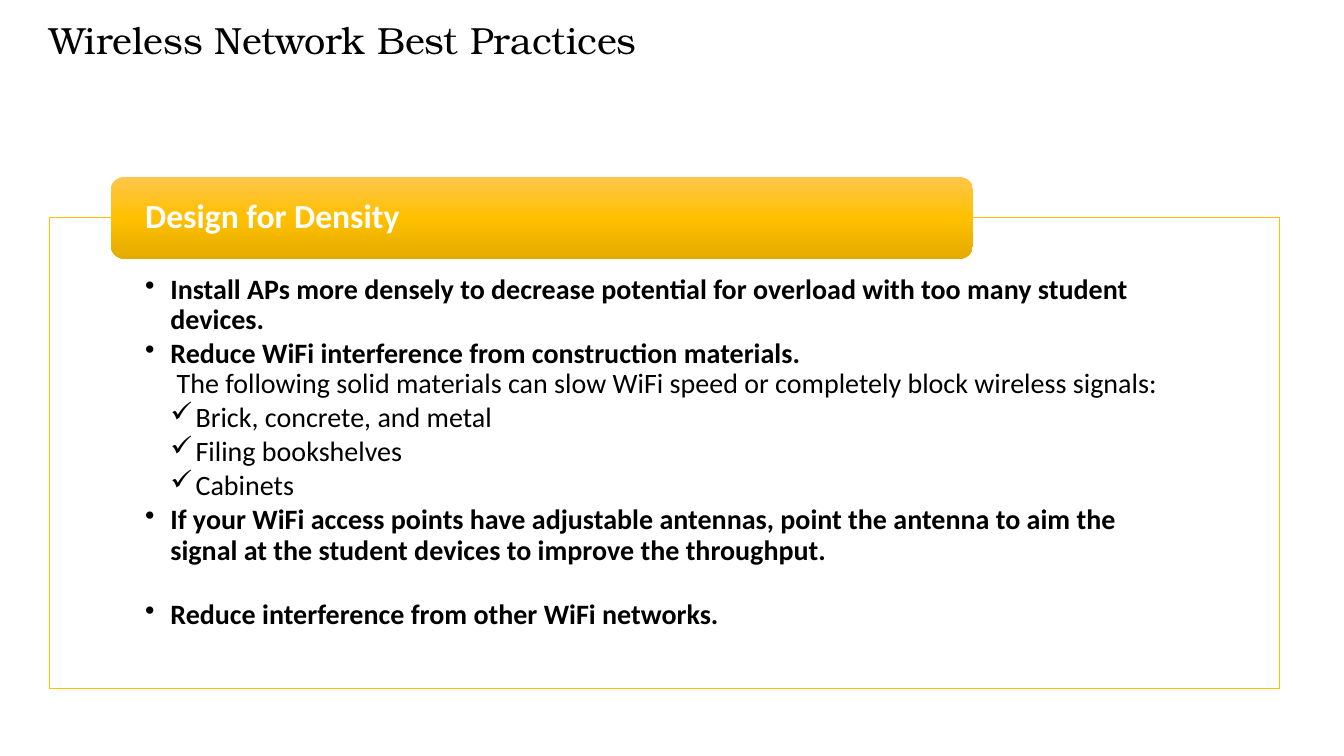
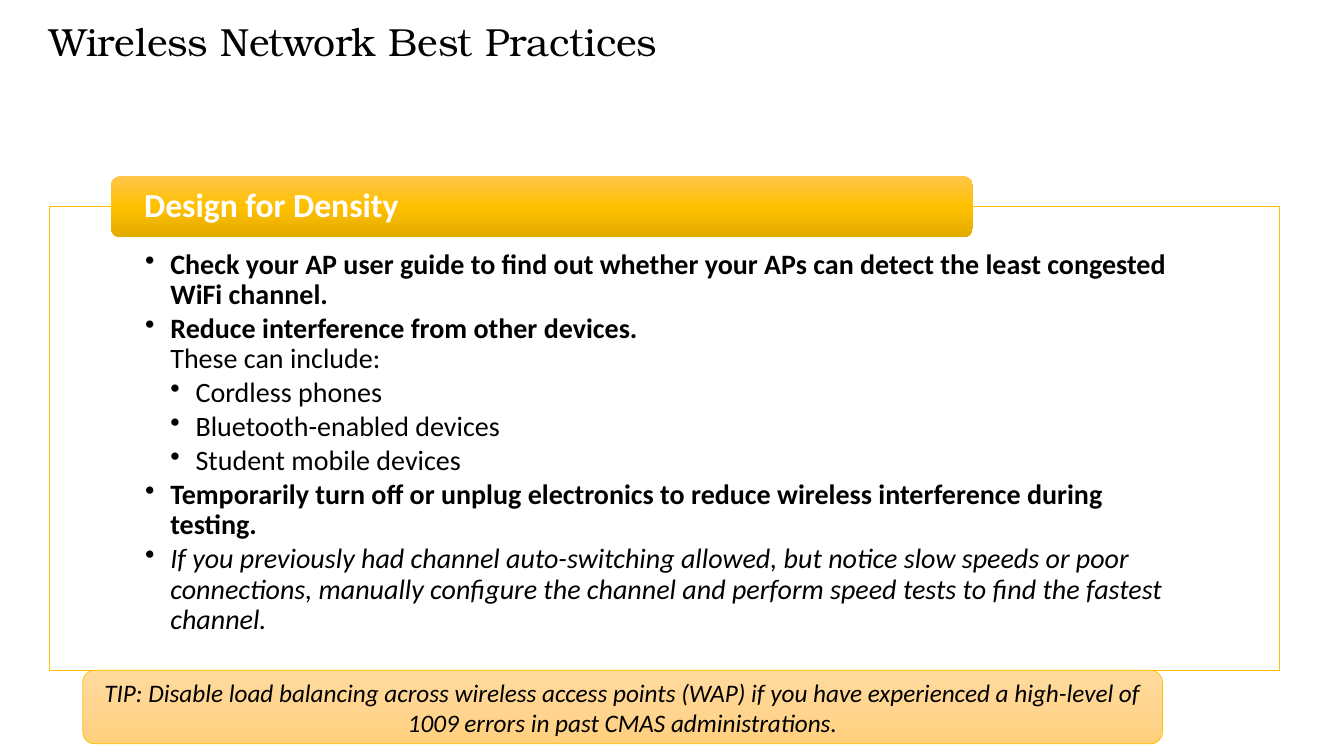
from copy import deepcopy
from dataclasses import dataclass

from lxml.etree import SubElement
from pptx import Presentation
from pptx.dml.color import RGBColor
from pptx.enum.shapes import MSO_SHAPE
from pptx.enum.text import MSO_ANCHOR, MSO_AUTO_SIZE, PP_ALIGN
from pptx.oxml.ns import qn
from pptx.util import Inches, Pt

TITLE = "Wireless Network Best Practices"
HEADING = "Design for Density"
TITLE_FONT = "TeX Gyre Bonum"
BODY_FONT = "Calibri"
BLACK, WHITE, GOLD = "000000", "FFFFFF", "FFC000"
HEADING_GRADIENT = ("FFC64B", GOLD, "E3AB00")
TIP_GRADIENT = ("FFDB9E", "FFD590", "FFD07C")
LEFT = 0.49
FRAME_WIDTH = 12.2
LINE_SPACING = 0.9
INDENT = 0.25
ITEM_GAP = 2.7


@dataclass(frozen=True)
class Item:
    """A bullet; detail follows on a new line in regular weight."""
    text: str
    detail: str = ""
    level: int = 1
    bullet: str = "•"
    bold: bool = False
    italic: bool = False
    space_after: float = ITEM_GAP


@dataclass(frozen=True)
class Page:
    title_size: int
    frame_top: float
    frame_height: float
    text_top: float
    heading_height: float
    items: tuple[Item, ...]
    tip: str = ""


PAGES = (
    Page(27, 2.16, 4.67, 0.57, 0.81, (
        Item("Install APs more densely to decrease potential for overload "
             "with too many student devices.", bold=True),
        Item("Reduce WiFi interference from construction materials.",
             " The following solid materials can slow WiFi speed or "
             "completely block wireless signals:", bold=True),
        Item("Brick, concrete, and metal", level=2, bullet="✓"),
        Item("Filing bookshelves", level=2, bullet="✓"),
        Item("Cabinets", level=2, bullet="✓"),
        Item("If your WiFi access points have adjustable antennas, point the "
             "antenna to aim the signal at the student devices to improve "
             "the throughput.", bold=True, space_after=24.5),
        Item("Reduce interference from other WiFi networks.", bold=True),
    )),
    Page(28, 2.05, 4.6, 0.43, 0.61, (
        Item("Check your AP user guide to find out whether your APs can "
             "detect the least congested WiFi channel.", bold=True),
        Item("Reduce interference from other devices.",
             "These can include:", bold=True),
        Item("Cordless phones", level=2),
        Item("Bluetooth-enabled devices", level=2),
        Item("Student mobile devices", level=2),
        Item("Temporarily turn off or unplug electronics to reduce wireless "
             "interference during testing.", bold=True),
        Item("If you previously had channel auto-switching allowed, but "
             "notice slow speeds or poor connections, manually configure the "
             "channel and perform speed tests to find the fastest channel.",
             italic=True),
    ), "TIP: Disable load balancing across wireless access points (WAP) if "
       "you have experienced a high-level of 1009 errors in past CMAS "
       "administrations."),
)


def color(value: str) -> RGBColor:
    return RGBColor.from_string(value)


def format_run(run, size: float, name: str = BODY_FONT, fill: str = BLACK,
               bold: bool = False, italic: bool = False) -> None:
    font = run.font
    font.size, font.name = Pt(size), name
    font.bold, font.italic = bold, italic
    font.color.rgb = color(fill)


def set_margins(text_frame, left: float, top: float, right: float,
                bottom: float) -> None:
    text_frame.margin_left, text_frame.margin_top = Inches(left), Inches(top)
    text_frame.margin_right = Inches(right)
    text_frame.margin_bottom = Inches(bottom)


def add_box(slide, kind: MSO_SHAPE, left: float, top: float, width: float,
            height: float, line: str = ""):
    shape = slide.shapes.add_shape(kind, Inches(left), Inches(top),
                                   Inches(width), Inches(height))
    shape.shadow.inherit = False
    if line:
        shape.line.color.rgb = color(line)
        shape.line.width = Pt(0.5)
    else:
        shape.line.fill.background()
    shape.text_frame.word_wrap = True
    return shape


def fill_gradient(shape, colors: tuple[str, ...]) -> None:
    """Fill from top to bottom with evenly spaced colours."""
    fill = shape.fill
    fill.gradient()
    fill.gradient_angle = 270
    stop_list = shape.element.spPr.find(qn("a:gradFill")).find(qn("a:gsLst"))
    while len(stop_list) < len(colors):
        stop_list.append(deepcopy(stop_list[0]))
    for index, (stop, value) in enumerate(zip(fill.gradient_stops, colors)):
        stop.position = index / (len(colors) - 1)
        stop.color.rgb = color(value)


def add_title(slide, size: int) -> None:
    title = slide.shapes.title
    title.left, title.top = Inches(LEFT), Inches(0.22)
    title.width, title.height = Inches(8.82), Inches(0.98)
    text_frame = title.text_frame
    text_frame.text = TITLE
    text_frame.auto_size = MSO_AUTO_SIZE.NONE
    text_frame.vertical_anchor = MSO_ANCHOR.TOP
    set_margins(text_frame, 0, 0, 0, 0)
    paragraph = text_frame.paragraphs[0]
    paragraph.alignment = PP_ALIGN.LEFT
    paragraph.line_spacing = LINE_SPACING
    format_run(paragraph.runs[0], size, TITLE_FONT)


def write_item(paragraph, item: Item) -> None:
    paragraph.text = f"{item.text}\v{item.detail}" if item.detail else item.text
    paragraph.level = item.level
    paragraph.alignment = PP_ALIGN.LEFT
    paragraph.line_spacing = LINE_SPACING
    paragraph.space_after = Pt(item.space_after)
    properties = paragraph._p.get_or_add_pPr()
    properties.set("marL", str(Inches(INDENT * item.level)))
    properties.set("indent", str(Inches(-INDENT)))
    SubElement(properties, qn("a:buChar")).set("char", item.bullet)
    paragraph.font.size = Pt(20)
    for index, run in enumerate(paragraph.runs):
        format_run(run, 20, bold=item.bold and index == 0, italic=item.italic)


def add_frame(slide, page: Page) -> None:
    frame = add_box(slide, MSO_SHAPE.RECTANGLE, LEFT, page.frame_top,
                    FRAME_WIDTH, page.frame_height, GOLD)
    frame.fill.solid()
    frame.fill.fore_color.rgb = color(WHITE)
    fill_color = frame.element.spPr.find(qn("a:solidFill"))[0]
    SubElement(fill_color, qn("a:alpha")).set("val", "90000")
    text_frame = frame.text_frame
    text_frame.vertical_anchor = MSO_ANCHOR.TOP
    set_margins(text_frame, 0.95, page.text_top, 0.95, 0.16)
    for index, item in enumerate(page.items):
        paragraph = (text_frame.add_paragraph() if index
                     else text_frame.paragraphs[0])
        write_item(paragraph, item)


def add_heading(slide, page: Page) -> None:
    """Add the heading bar, centred on the frame's top edge."""
    bar = add_box(slide, MSO_SHAPE.ROUNDED_RECTANGLE, 1.1,
                  page.frame_top - page.heading_height / 2, 8.55,
                  page.heading_height)
    fill_gradient(bar, HEADING_GRADIENT)
    text_frame = bar.text_frame
    text_frame.text = HEADING
    text_frame.vertical_anchor = MSO_ANCHOR.MIDDLE
    set_margins(text_frame, 0.3, 0, 0.3, 0)
    paragraph = text_frame.paragraphs[0]
    paragraph.alignment = PP_ALIGN.LEFT
    paragraph.line_spacing = LINE_SPACING
    format_run(paragraph.runs[0], 24, fill=WHITE, bold=True)


def add_tip(slide, page: Page) -> None:
    tip = add_box(slide, MSO_SHAPE.ROUNDED_RECTANGLE, 0.82,
                  page.frame_top + page.frame_height, 10.71, 0.73, GOLD)
    fill_gradient(tip, TIP_GRADIENT)
    text_frame = tip.text_frame
    text_frame.text = page.tip
    text_frame.vertical_anchor = MSO_ANCHOR.MIDDLE
    paragraph = text_frame.paragraphs[0]
    paragraph.alignment = PP_ALIGN.CENTER
    format_run(paragraph.runs[0], 18, italic=True)


def main() -> None:
    presentation = Presentation()
    presentation.slide_width = Inches(13.33)
    presentation.slide_height = Inches(7.5)
    title_only = presentation.slide_layouts[5]
    for page in PAGES:
        slide = presentation.slides.add_slide(title_only)
        add_title(slide, page.title_size)
        add_frame(slide, page)
        add_heading(slide, page)
        if page.tip:
            add_tip(slide, page)
    presentation.save("out.pptx")


if __name__ == "__main__":
    main()
